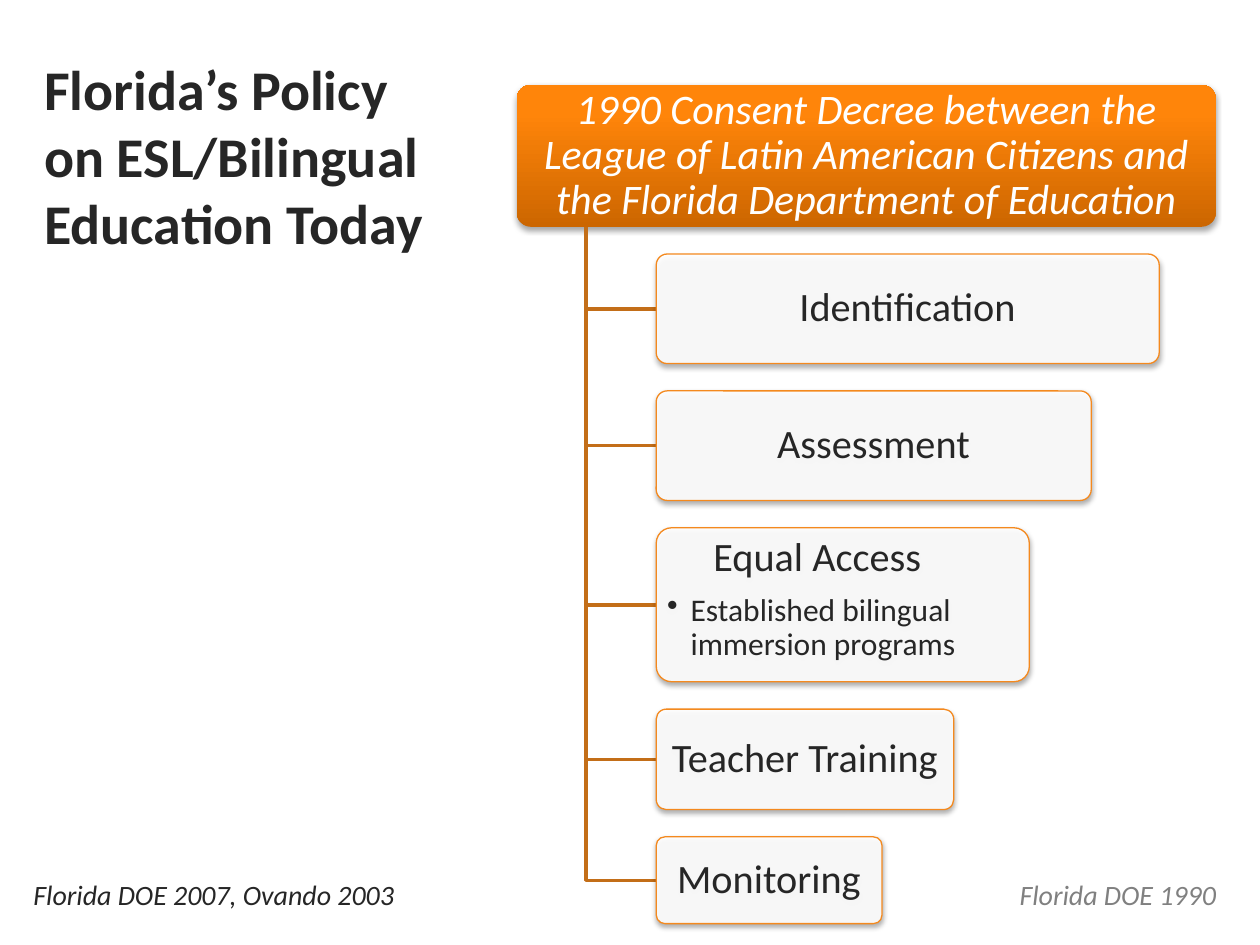
from dataclasses import dataclass

from lxml import etree
from pptx import Presentation
from pptx.dml.color import RGBColor
from pptx.enum import shapes, text
from pptx.oxml import ns
from pptx.util import Pt


@dataclass(frozen=True)
class Theme:
    font: str = "Calibri"
    ink: str = "262626"
    muted: str = "808080"
    white: str = "FFFFFF"
    spine: str = "C36E18"
    outline: str = "F4891E"
    gradient: tuple = ((0, "CC6600"), (80, "FF850A"), (100, "FF850C"))
    title: float = 32
    decree: float = 24
    topic: float = 23
    detail: float = 18
    source: float = 16


THEME = Theme()

DECREE = ("1990 Consent Decree between the League of Latin American Citizens "
          "and the Florida Department of Education")
DECREE_BOX = (295.2, 48.5, 399.6, 81.1)
SPINE_X, TOPIC_X, GAP = 335, 375, 15.6

# Heading, width, height, detail
TOPICS = (
    ("Identification", 287.4, 62.6, None),
    ("Assessment", 248.6, 62.6, None),
    ("Equal Access", 213.2, 88, "Established bilingual immersion programs"),
    ("Teacher Training", 170, 57.4, None),
    ("Monitoring", 129, 49.6, None),
)


def rgb(color):
    return RGBColor.from_string(color)


def add_xml(parent, tag, **attributes):
    child = etree.SubElement(parent, ns.qn(tag))
    for key, value in attributes.items():
        child.set(key, str(value))
    return child


def style(paragraph, size, color, bold=False, italic=False):
    font = paragraph.font
    font.name, font.size = THEME.font, Pt(size)
    font.bold, font.italic = bold, italic
    font.color.rgb = rgb(color)


def add_shadow(shape):
    shape.shadow.inherit = False
    effects = shape._element.spPr.find(ns.qn("a:effectLst"))
    shadow = add_xml(effects, "a:outerShdw", blurRad=Pt(3.1), dist=Pt(1.8),
                     dir=5400000, rotWithShape=0)
    add_xml(add_xml(shadow, "a:srgbClr", val="000000"), "a:alpha", val=35000)


def add_card(slide, box, heading, size, color, italic=False):
    card = slide.shapes.add_shape(shapes.MSO_SHAPE.ROUNDED_RECTANGLE, *map(Pt, box))
    card.adjustments[0] = 0.1
    add_shadow(card)
    frame = card.text_frame
    frame.word_wrap = True
    frame.margin_left = frame.margin_right = Pt(3.6)
    frame.margin_top = frame.margin_bottom = Pt(2.4)
    frame.vertical_anchor = text.MSO_ANCHOR.MIDDLE
    frame.text = heading
    paragraph = frame.paragraphs[0]
    paragraph.alignment = text.PP_ALIGN.CENTER
    paragraph.line_spacing = 0.9
    style(paragraph, size, color, italic=italic)
    return card


def add_decree(slide):
    card = add_card(slide, DECREE_BOX, DECREE, THEME.decree, THEME.white, italic=True)
    card.line.fill.background()
    card.fill.gradient()
    card.fill.gradient_angle = 90
    stops = card._element.spPr.find(".//" + ns.qn("a:gsLst"))
    stops.clear()
    for position, color in THEME.gradient:
        stop = add_xml(stops, "a:gs", pos=position * 1000)
        add_xml(stop, "a:srgbClr", val=color)


def add_branch(slide, start_y, end_y):
    """Draw the elbow from the decree down the spine to one topic."""
    builder = slide.shapes.build_freeform(Pt(SPINE_X), Pt(start_y))
    builder.add_line_segments(
        [(Pt(SPINE_X), Pt(end_y)), (Pt(TOPIC_X), Pt(end_y))], close=False)
    branch = builder.convert_to_shape()
    branch.fill.background()
    branch.line.color.rgb = rgb(THEME.spine)
    branch.line.width = Pt(2)
    branch.shadow.inherit = False


def add_detail(frame, detail):
    """Turn a centred topic into a top-left heading with a bullet below."""
    frame.vertical_anchor = text.MSO_ANCHOR.TOP
    heading = frame.paragraphs[0]
    heading.alignment = text.PP_ALIGN.LEFT
    heading.space_after = Pt(8)
    heading._p.get_or_add_pPr().set("marL", str(Pt(26.5)))
    bullet = frame.add_paragraph()
    bullet.text = detail
    bullet.level = 1
    bullet.alignment = text.PP_ALIGN.LEFT
    bullet.line_spacing = 0.9
    properties = bullet._p.get_or_add_pPr()
    properties.set("marL", str(Pt(13.5)))
    properties.set("indent", str(-Pt(13.5)))
    add_xml(properties, "a:buChar", char="•")
    style(bullet, THEME.detail, THEME.ink)


def add_topic(slide, top, heading, width, height, detail):
    card = add_card(slide, (TOPIC_X, top, width, height), heading,
                    THEME.topic, THEME.ink)
    card.fill.solid()
    card.fill.fore_color.rgb = rgb(THEME.white)
    fill_color = card._element.spPr.find(ns.qn("a:solidFill"))[0]
    add_xml(fill_color, "a:alpha", val=90000)
    card.line.color.rgb = rgb(THEME.outline)
    card.line.width = Pt(0.75)
    if detail:
        add_detail(card.text_frame, detail)


def add_source(slide, left, width, citation, color, alignment):
    frame = slide.shapes.add_textbox(Pt(left), Pt(498), Pt(width), Pt(26.6)).text_frame
    frame.word_wrap = True
    frame.text = citation
    frame.paragraphs[0].alignment = alignment
    style(frame.paragraphs[0], THEME.source, color, italic=True)


def set_title(slide, wording):
    title = slide.shapes.title
    title.left, title.top, title.width, title.height = map(Pt, (18, 30, 237, 120))
    frame = title.text_frame
    frame.text = wording
    frame.word_wrap = True
    frame.auto_size = text.MSO_AUTO_SIZE.NONE
    frame.vertical_anchor = text.MSO_ANCHOR.BOTTOM
    frame.paragraphs[0].alignment = text.PP_ALIGN.LEFT
    style(frame.paragraphs[0], THEME.title, THEME.ink, bold=True)


def main():
    deck = Presentation()
    deck.slide_width, deck.slide_height = Pt(720), Pt(540)
    slide = deck.slides.add_slide(deck.slide_layouts[5])
    set_title(slide, "Florida’s Policy on ESL/Bilingual Education Today")
    add_decree(slide)

    decree_bottom = DECREE_BOX[1] + DECREE_BOX[3]
    top = decree_bottom + GAP
    for heading, width, height, detail in TOPICS:
        add_branch(slide, decree_bottom, top + height / 2)
        add_topic(slide, top, heading, width, height, detail)
        top += height + GAP

    add_source(slide, 324, 378, "Florida DOE 1990", THEME.muted, text.PP_ALIGN.RIGHT)
    add_source(slide, 12, 252, "Florida DOE 2007, Ovando 2003", THEME.ink,
               text.PP_ALIGN.LEFT)
    deck.save("out.pptx")


if __name__ == "__main__":
    main()
